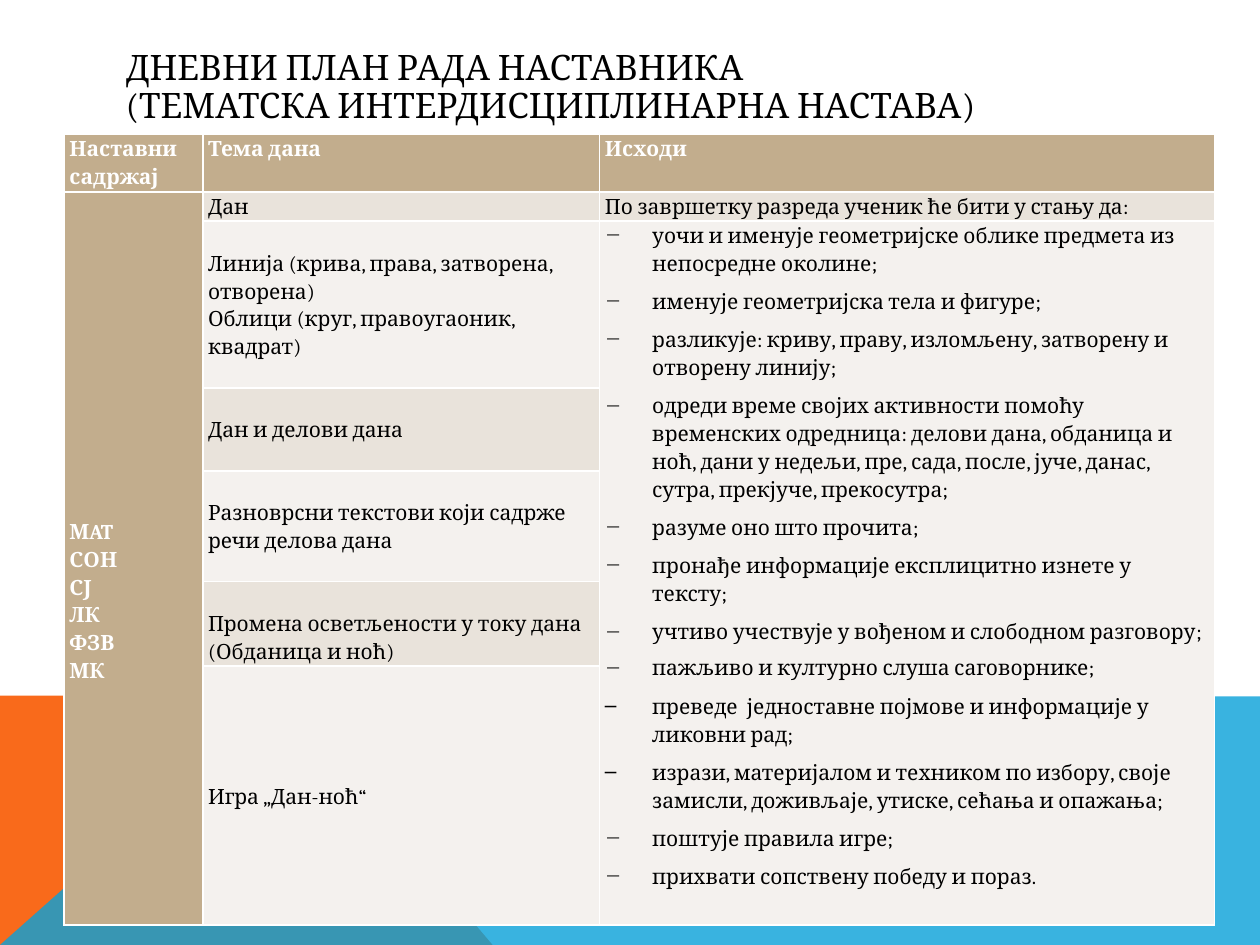
"""Build the daily teaching plan slide with its table of topics and outcomes."""
from lxml.etree import SubElement
from pptx import Presentation
from pptx.dml.color import RGBColor
from pptx.enum.text import MSO_ANCHOR, PP_ALIGN
from pptx.oxml.ns import qn
from pptx.util import Pt

FONT = "Cambria"
COLORS = {
    "orange": "F96A1B", "blue": "08A1D9", "header": "C2AD8D", "dark_band": "E9E3DB",
    "light_band": "F4F1EE", "white": "FFFFFF", "black": "000000",
}
TITLE = "ДНЕВНИ ПЛАН РАДА НАСТАВНИКА\v(ТЕМАТСКА ИНТЕРДИСЦИПЛИНАРНА НАСТАВА)"
HEADINGS = ["Наставни садржај", "Тема дана", "Исходи"]
SUBJECTS = ["МAT", "СОН", "СЈ", "ЛК", "ФЗВ", "МК"]
TOPICS = [
    ["Дан"],
    ["Линија (крива, права, затворена, отворена)", "Облици (круг, правоугаоник, квадрат)"],
    ["Дан и делови дана"],
    ["Разноврсни текстови који садрже речи делова дана"],
    ["Промена осветљености у току дана (Обданица и ноћ)"],
    ["Игра „Дан-ноћ“"],
]
OUTCOMES_INTRO = "По завршетку разреда ученик ће бити у стању да:"
OUTCOMES = [
    ("−", 1.15, "уочи и именује геометријске облике предмета из непосредне околине;"),
    ("−", 1.15, "именује геометријска тела и фигуре;"),
    ("−", 1.15, "разликује: криву, праву, изломљену, затворену и отворену линију;"),
    ("−", 1.15, "одреди време својих активности помоћу временских одредница: делови дана, "
                "обданица и ноћ, дани у недељи, пре, сада, после, јуче, данас, сутра, "
                "прекјуче, прекосутра;"),
    ("−", 1.15, "разуме оно што прочита;"),
    ("−", 1.15, "пронађе информације експлицитно изнете у тексту;"),
    ("−", 1.15, "учтиво учествује у вођеном и слободном разговору;"),
    ("−", 1.06, "пажљиво и културно слуша саговорнике;"),
    ("–", 1.15, "преведе  једноставне појмове и информације у ликовни рад;"),
    ("–", 1.15, "изрази, материјалом и техником по избору, своје замисли, доживљаје, "
                "утиске, сећања и опажања;"),
    ("−", 1.15, "поштује правила игре;"),
    ("−", 1.15, "прихвати сопствену победу и пораз."),
]
CORNERS = [
    ("orange", 100, [(0, 540), (0, 397.5), (160.5, 397.5), (281.5, 540)]),
    ("blue", 80, [(0, 540), (160.5, 397.5), (720, 398), (720, 540)]),
]
COLUMN_WIDTHS = [79.2, 226.8, 351.4]
ROW_HEIGHTS = [31, 16, 95.4, 47.4, 63.4, 47.4, 148]
TABLE_LEFT, TABLE_TOP = 36.7, 76.5
LINE_HEIGHT = 16
BULLET_INDENT = 27


def color(name):
    return RGBColor.from_string(COLORS[name])


def style(paragraph, text_color, size=12, bold=False, spacing=1.15):
    paragraph.line_spacing = spacing
    font = paragraph.font
    font.name, font.size, font.bold = FONT, Pt(size), bold
    font.color.rgb = color(text_color)


def add_corner(slide, fill, opacity, points):
    builder = slide.shapes.build_freeform(Pt(points[0][0]), Pt(points[0][1]))
    builder.add_line_segments([(Pt(x), Pt(y)) for x, y in points[1:]], close=True)
    corner = builder.convert_to_shape()
    corner.shadow.inherit = False
    corner.line.fill.background()
    corner.fill.solid()
    corner.fill.fore_color.rgb = color(fill)
    if opacity < 100:
        rgb = corner.fill._xPr.find(".//" + qn("a:srgbClr"))
        SubElement(rgb, qn("a:alpha"), val=str(opacity * 1000))


def add_title(slide):
    title = slide.shapes.add_textbox(Pt(64.8), Pt(28.8), Pt(592), Pt(43.2)).text_frame
    title.word_wrap = True
    title.vertical_anchor = MSO_ANCHOR.MIDDLE
    title.text = TITLE
    style(title.paragraphs[0], "black", size=20, spacing=0.9)


def fill_cell(cell, lines, fill, text_color="black", bold=False,
              anchor=MSO_ANCHOR.TOP, top=0):
    cell.margin_left = cell.margin_right = Pt(3)
    cell.margin_top, cell.margin_bottom = Pt(top), 0
    cell.vertical_anchor = anchor
    cell.fill.solid()
    cell.fill.fore_color.rgb = color(fill)
    cell.text = "\n".join(lines)
    for paragraph in cell.text_frame.paragraphs:
        style(paragraph, text_color, bold=bold)


def add_bullet(paragraph, mark):
    properties = paragraph._p.get_or_add_pPr()
    properties.set("marL", str(Pt(BULLET_INDENT)))
    properties.set("indent", str(-Pt(BULLET_INDENT)))
    bullet = SubElement(properties, qn("a:buChar"), char=mark)
    properties.find(qn("a:defRPr")).addprevious(bullet)


def add_plan(slide):
    plan = slide.shapes.add_table(
        len(ROW_HEIGHTS), len(COLUMN_WIDTHS), Pt(TABLE_LEFT), Pt(TABLE_TOP),
        Pt(sum(COLUMN_WIDTHS)), Pt(sum(ROW_HEIGHTS))).table
    for column, width in zip(plan.columns, COLUMN_WIDTHS):
        column.width = Pt(width)
    for row, height in zip(plan.rows, ROW_HEIGHTS):
        row.height = Pt(height)

    last_row = len(ROW_HEIGHTS) - 1
    plan.cell(1, 0).merge(plan.cell(last_row, 0))
    plan.cell(2, 2).merge(plan.cell(last_row, 2))

    for index, heading in enumerate(HEADINGS):
        fill_cell(plan.cell(0, index), [heading], "header", "white", bold=True)
    fill_cell(plan.cell(1, 0), SUBJECTS, "header", "white", bold=True,
              anchor=MSO_ANCHOR.MIDDLE, top=3 * LINE_HEIGHT)
    for row, topic in enumerate(TOPICS, start=1):
        fill_cell(plan.cell(row, 1), topic, "dark_band" if row % 2 else "light_band",
                  anchor=MSO_ANCHOR.TOP if row == 1 else MSO_ANCHOR.MIDDLE,
                  top=LINE_HEIGHT - 1 if row == 5 else 0)

    fill_cell(plan.cell(1, 2), [OUTCOMES_INTRO], "dark_band")
    for row in (0, 1):
        plan.cell(row, 2).text_frame.paragraphs[0].alignment = PP_ALIGN.JUSTIFY
    outcomes = plan.cell(2, 2)
    fill_cell(outcomes, [text for _, _, text in OUTCOMES], "light_band")
    for paragraph, (mark, spacing, _) in zip(outcomes.text_frame.paragraphs, OUTCOMES):
        paragraph.line_spacing = spacing
        paragraph.space_after = Pt(6)
        add_bullet(paragraph, mark)


def main():
    presentation = Presentation()
    presentation.slide_width, presentation.slide_height = Pt(720), Pt(540)
    slide = presentation.slides.add_slide(presentation.slide_layouts[6])
    for corner in CORNERS:
        add_corner(slide, *corner)
    add_title(slide)
    add_plan(slide)
    presentation.save("out.pptx")


if __name__ == "__main__":
    main()
